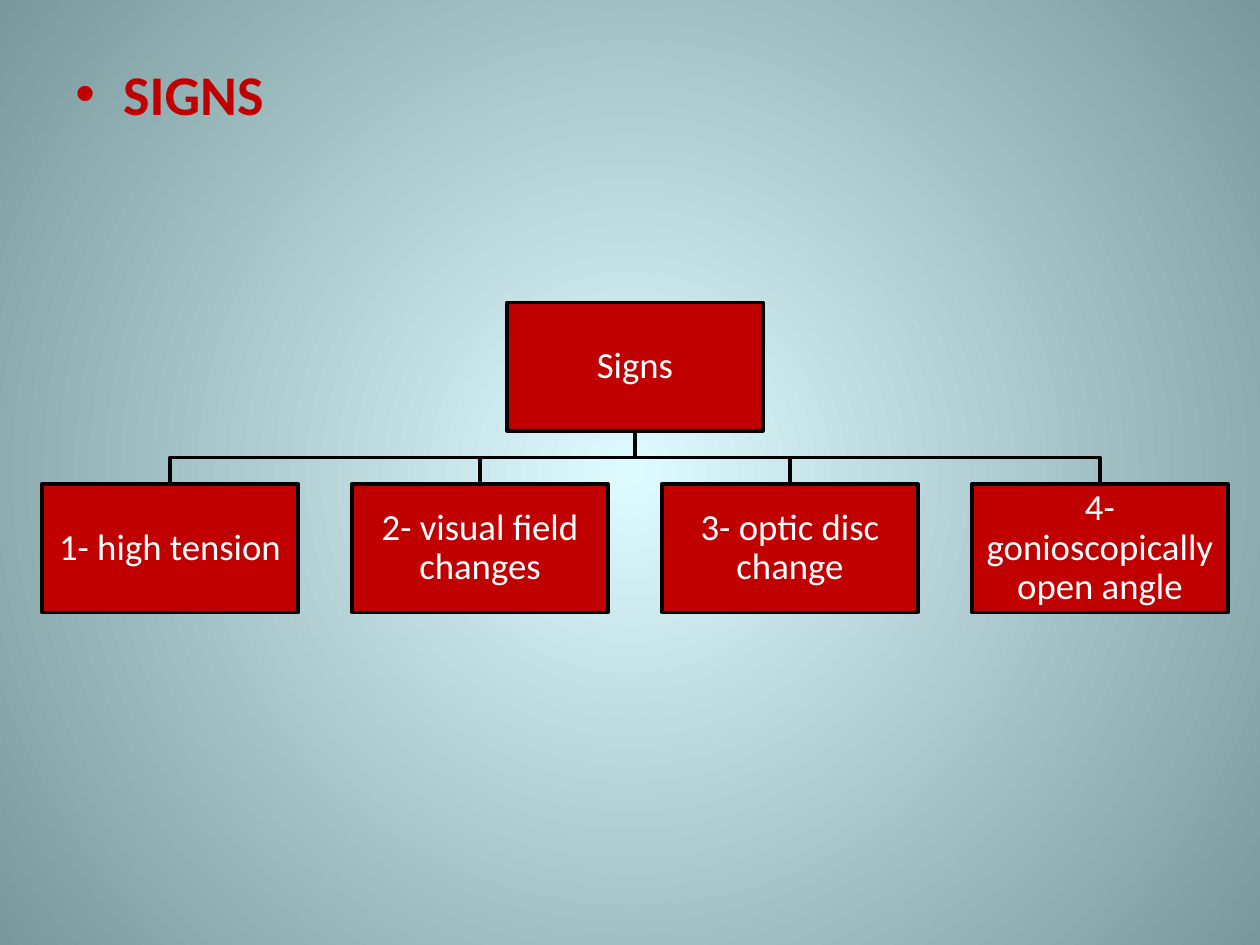
"""Build a slide with a heading and a chart of four clinical signs."""
from lxml import etree
from pptx import Presentation
from pptx.dml.color import RGBColor
from pptx.enum import shapes, text
from pptx.oxml import ns, parse_xml
from pptx.util import Inches, Pt

COLORS = {"center": "DEFBFF", "edge": "79989C", "red": "C00000", "black": "000000", "white": "FFFFFF"}
PALETTE = {name: RGBColor.from_string(value) for name, value in COLORS.items()}
BOX_WIDTH, BOX_HEIGHT = 2.03, 1.02
ROOT_CENTER, ROOT_TOP, CHILD_TOP = 5.04, 2.4, 3.84
STEP = 2.46
SIGNS = ["1- high tension", "2- visual field changes", "3- optic disc change", "4- gonioscopically open angle"]


def write(frame, words, font_format, frame_format, para_format):
    para = frame.paragraphs[0]
    span = para.add_run()
    span.text = words
    span.font.color.rgb = PALETTE[font_format["color"]]
    formats = {"name": "Calibri", "size": font_format["size"], "bold": font_format["bold"]}
    for target, values in ((span.font, formats), (frame, frame_format), (para, para_format)):
        for name, value in values.items():
            setattr(target, name, value)
    return para


def outline(shape):
    shape.shadow.inherit = False
    shape.line.color.rgb = PALETTE["black"]
    shape.line.width = Pt(2)


deck = Presentation()
deck.slide_width, deck.slide_height = Inches(10), Inches(7.5)
page = deck.slides.add_slide(deck.slide_layouts[6])

backdrop = page.background.fill
backdrop.gradient()
for stop, name in zip(backdrop.gradient_stops, ("center", "edge")):
    stop.color.rgb = PALETTE[name]
linear = page.element.find(".//" + ns.qn("a:lin"))
radial = parse_xml(
    f'<a:path {ns.nsdecls("a")} path="circle">'
    '<a:fillToRect l="50000" t="50000" r="50000" b="50000"/></a:path>'
)
linear.getparent().replace(linear, radial)

heading = page.shapes.add_textbox(Inches(0.5), Inches(0.42), Inches(9), Inches(6.67))
heading_para = write(
    heading.text_frame,
    "SIGNS",
    {"color": "red", "size": Pt(32), "bold": True},
    {"word_wrap": True},
    {"space_before": Pt(6.4)},
)
properties = heading_para._p.get_or_add_pPr()
properties.set("marL", str(Inches(0.38)))
properties.set("indent", str(Inches(-0.38)))
etree.SubElement(properties, ns.qn("a:buFont")).set("typeface", "Arial")
etree.SubElement(properties, ns.qn("a:buChar")).set("char", "•")

centers = [ROOT_CENTER + (index - 1.5) * STEP for index in range(len(SIGNS))]
root_bottom = ROOT_TOP + BOX_HEIGHT
branch_level = (root_bottom + CHILD_TOP) / 2
for center in centers:
    builder = page.shapes.build_freeform(Inches(ROOT_CENTER), Inches(root_bottom))
    corners = [(ROOT_CENTER, branch_level), (center, branch_level), (center, CHILD_TOP)]
    builder.add_line_segments([(Inches(x), Inches(y)) for x, y in corners], close=False)
    branch = builder.convert_to_shape()
    branch.fill.background()
    outline(branch)

nodes = [("Signs", ROOT_CENTER, ROOT_TOP)]
nodes += [(sign, center, CHILD_TOP) for sign, center in zip(SIGNS, centers)]
margins = {f"margin_{side}": Inches(0.01) for side in ("left", "top", "right", "bottom")}
for words, center, top in nodes:
    box = page.shapes.add_shape(
        shapes.MSO_SHAPE.RECTANGLE,
        Inches(center - BOX_WIDTH / 2), Inches(top), Inches(BOX_WIDTH), Inches(BOX_HEIGHT),
    )
    box.fill.solid()
    box.fill.fore_color.rgb = PALETTE["red"]
    outline(box)
    write(
        box.text_frame,
        words,
        {"color": "white", "size": Pt(21), "bold": False},
        {"word_wrap": True, "vertical_anchor": text.MSO_ANCHOR.MIDDLE, **margins},
        {"alignment": text.PP_ALIGN.CENTER, "line_spacing": 0.9},
    )

deck.save("out.pptx")
